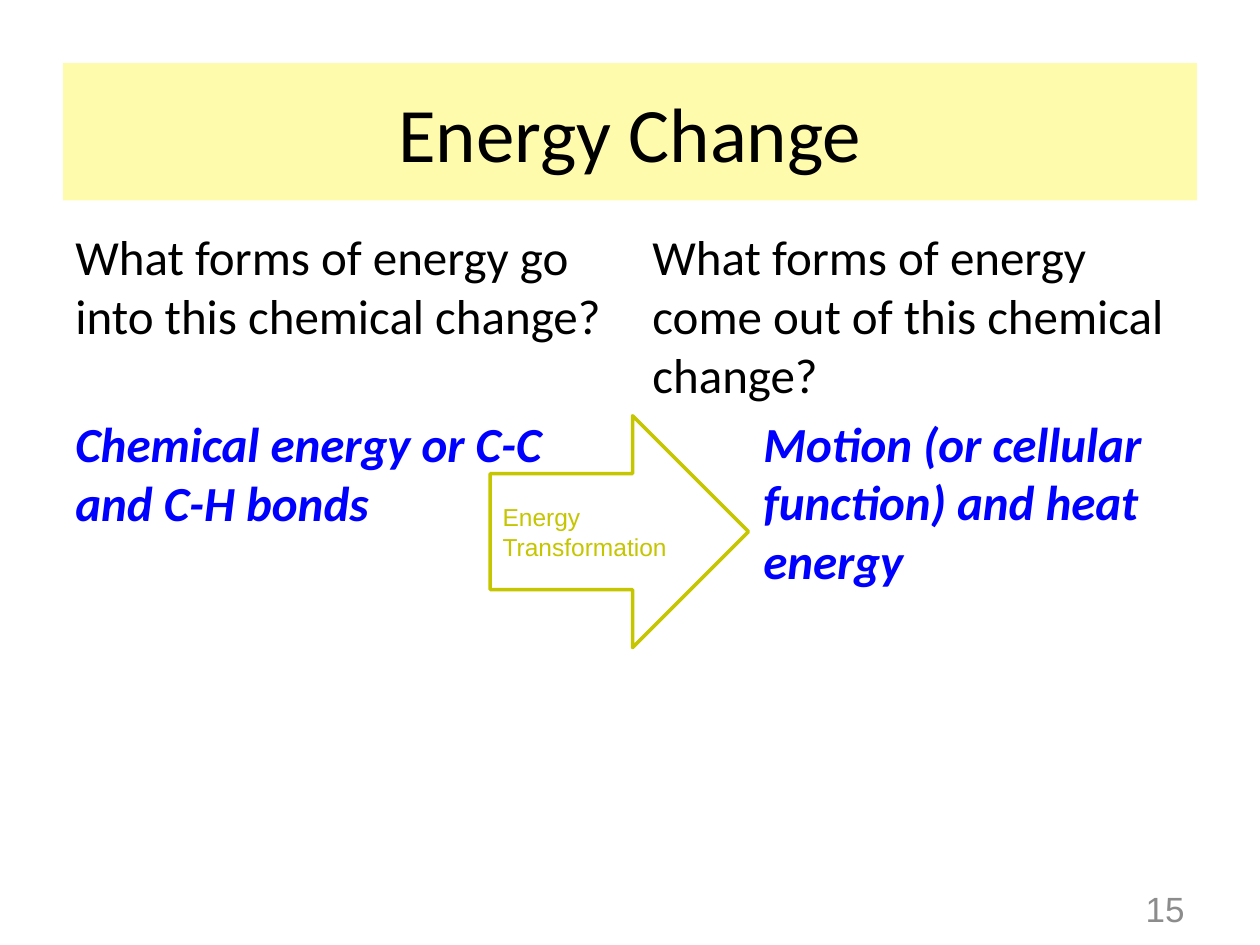
from pptx import Presentation
from pptx.dml.color import RGBColor
from pptx.enum.shapes import MSO_SHAPE
from pptx.enum.text import MSO_ANCHOR, PP_ALIGN
from pptx.util import Inches, Pt

BLACK = RGBColor(0x00, 0x00, 0x00)
WHITE = RGBColor(0xFF, 0xFF, 0xFF)
BLUE = RGBColor(0x00, 0x00, 0xFF)
GREY = RGBColor(0x8C, 0x8C, 0x8C)
OLIVE = RGBColor(0xC5, 0xC5, 0x00)
PALE_YELLOW = RGBColor(0xFF, 0xFB, 0xAD)

BODY_SIZE = 28
BODY_GAP = 0.2 * BODY_SIZE
BODY_LINE = 1.22 * BODY_SIZE


class SlideBuilder:
    heading_font = "Calibri"
    label_font = "Arial"

    def __init__(self, page):
        self.page = page

    def style(self, para, font, size, color, align=PP_ALIGN.LEFT):
        para.alignment = align
        para.font.name = font
        para.font.size = Pt(size)
        para.font.color.rgb = color

    def place(self, shape, left, top, width, height):
        shape.left, shape.top = Inches(left), Inches(top)
        shape.width, shape.height = Inches(width), Inches(height)

    def text_box(self, left, top, width, height):
        box = self.page.shapes.add_textbox(
            Inches(left), Inches(top), Inches(width), Inches(height))
        box.text_frame.word_wrap = True
        return box.text_frame

    def title(self, text):
        title = self.page.shapes.title
        self.place(title, 0.5, 0.5, 9, 1.09)
        title.fill.solid()
        title.fill.fore_color.rgb = PALE_YELLOW
        frame = title.text_frame
        frame.text = text
        frame.vertical_anchor = MSO_ANCHOR.MIDDLE
        self.style(frame.paragraphs[0], self.heading_font, 44, BLACK, PP_ALIGN.CENTER)

    def question(self, left, question, answer, indent=0, spare_lines=0):
        """Add a question and its answer; spare_lines lowers the answer."""
        frame = self.text_box(left, 1.75, 4.42, 4.95)
        para = frame.paragraphs[0]
        para.text = question
        para.space_before = Pt(BODY_GAP)
        self.style(para, self.heading_font, BODY_SIZE, BLACK)

        para = frame.add_paragraph()
        para.text = answer
        para.space_before = Pt(BODY_GAP + spare_lines * BODY_LINE)
        self.style(para, self.heading_font, BODY_SIZE, BLUE)
        para.font.bold = para.font.italic = True
        para._p.get_or_add_pPr().set("marL", str(Inches(indent)))

    def arrow(self, text):
        arrow = self.page.shapes.add_shape(
            MSO_SHAPE.RIGHT_ARROW, Inches(3.89), Inches(3.3), Inches(2.05), Inches(1.84))
        arrow.shadow.inherit = False
        arrow.fill.solid()
        arrow.fill.fore_color.rgb = WHITE
        arrow.line.color.rgb = OLIVE
        arrow.line.width = Pt(2)
        frame = arrow.text_frame
        frame.word_wrap = True
        frame.vertical_anchor = MSO_ANCHOR.MIDDLE
        frame.text = text
        self.style(frame.paragraphs[0], self.label_font, 14, OLIVE)

    def page_number(self, number):
        frame = self.text_box(7.17, 7.01, 2.33, 0.4)
        frame.vertical_anchor = MSO_ANCHOR.MIDDLE
        frame.text = str(number)
        self.style(frame.paragraphs[0], self.label_font, 20, GREY, PP_ALIGN.RIGHT)


def main():
    deck = Presentation()
    deck.slide_width, deck.slide_height = Inches(10), Inches(7.5)
    title_only = deck.slide_layouts[5]
    builder = SlideBuilder(deck.slides.add_slide(title_only))

    builder.title("Energy Change")
    builder.question(0.5, "What forms of energy go into this chemical change?",
                     "Chemical energy or C-C and C-H bonds", spare_lines=1)
    builder.question(5.08, "What forms of energy come out of this chemical change?",
                     "Motion (or cellular function) and heat energy", indent=0.88)
    builder.page_number(15)
    builder.arrow("Energy Transformation")

    deck.save("out.pptx")


if __name__ == "__main__":
    main()
